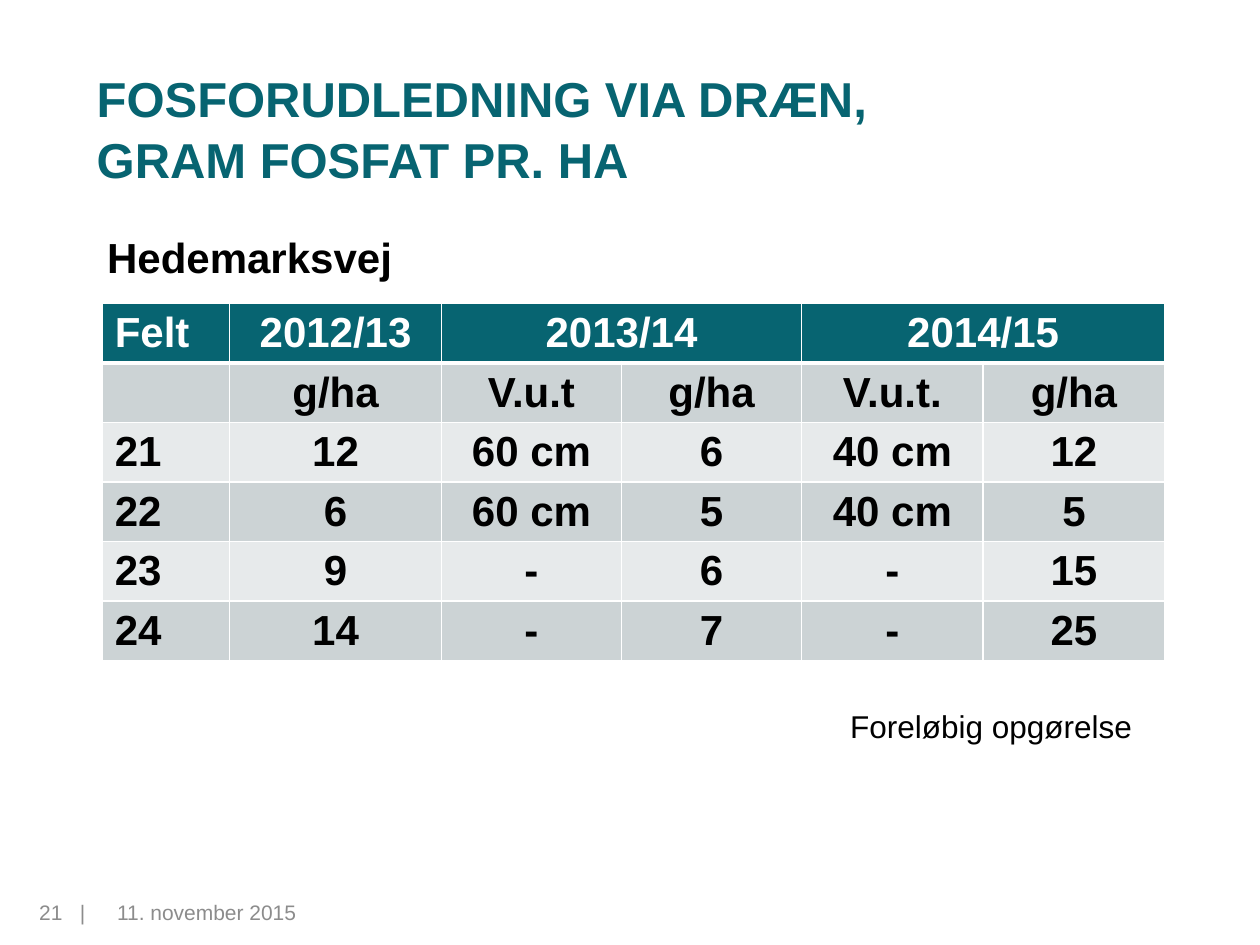
"""Build the slide on phosphorus discharge through drains."""
import copy

import pptx
import pptx.dml.color
import pptx.enum.text
import pptx.oxml
import pptx.oxml.ns
import pptx.util

Cm = pptx.util.Cm
Align = pptx.enum.text.PP_ALIGN
Anchor = pptx.enum.text.MSO_ANCHOR
TEAL = pptx.dml.color.RGBColor(0x07, 0x64, 0x71)
BLACK = pptx.dml.color.RGBColor(0, 0, 0)
WHITE = pptx.dml.color.RGBColor(255, 255, 255)
GREY = pptx.dml.color.RGBColor(0x8C, 0x8C, 0x8C)
BANDS = (pptx.dml.color.RGBColor(0xE7, 0xEA, 0xEB),
         pptx.dml.color.RGBColor(0xCC, 0xD3, 0xD5))

HEADING = "FOSFORUDLEDNING VIA DRÆN, \vGRAM FOSFAT PR. HA"
DISCHARGE = [
    ("Felt", "2012/13", "2013/14", "", "2014/15", ""),
    ("", "g/ha", "V.u.t", "g/ha", "V.u.t.", "g/ha"),
    ("21", "12", "60 cm", "6", "40 cm", "12"),
    ("22", "6", "60 cm", "5", "40 cm", "5"),
    ("23", "9", "-", "6", "-", "15"),
    ("24", "14", "-", "7", "-", "25"),
]
COLUMN_WIDTHS = (2.57, 4.27, 3.63, 3.63, 3.66, 3.66)
ROW_HEIGHT = 1.19
YEAR_SPANS = (2, 4)
LABELS = [
    ("Hedemarksvej", (1.91, 4.55, 6.32, 1.27),
     dict(size=24, color=BLACK, bold=True, wrap=False)),
    ("Foreløbig opgørelse", (16.89, 14.12, 6.25, 1.02),
     dict(size=18, color=BLACK, wrap=False)),
    ("11. november 2015", (2.11, 18.01, 5.92, 1.02),
     dict(size=12, color=GREY)),
    ("21\t|", (0, 18.01, 1.98, 1.02),
     dict(size=12, color=GREY, left=0.79, right=0, tab=0.82)),
]


def write(frame, text, size, color, bold=False, align=Align.LEFT, wrap=True,
          left=0.25, right=0.25, tab=None, spacing=None):
    frame.word_wrap = wrap
    frame.margin_left, frame.margin_right = Cm(left), Cm(right)
    paragraph = frame.paragraphs[0]
    paragraph.text = text
    paragraph.alignment = align
    if spacing:
        paragraph.line_spacing = spacing
    if tab:
        stops = pptx.oxml.parse_xml(
            f'<a:tabLst {pptx.oxml.ns.nsdecls("a")}>'
            f'<a:tab pos="{Cm(tab)}" algn="l"/></a:tabLst>')
        paragraph._p.get_or_add_pPr().append(stops)
    for run in paragraph.runs:
        run.font.name = "Arial"
        run.font.size = pptx.util.Pt(size)
        run.font.bold = bold
        run.font.color.rgb = color
    for line_break in paragraph._p.findall(pptx.oxml.ns.qn("a:br")):
        line_break.append(copy.deepcopy(paragraph.runs[0]._r.rPr))


def draw_borders(cell, top, bottom):
    properties = cell._tc.get_or_add_tcPr()
    for side, points in (("L", 1), ("R", 1), ("T", top), ("B", bottom)):
        properties.append(pptx.oxml.parse_xml(
            f'<a:ln{side} {pptx.oxml.ns.nsdecls("a")} w="{pptx.util.Pt(points)}">'
            f'<a:solidFill><a:srgbClr val="{WHITE}"/></a:solidFill></a:ln{side}>'))


def add_discharge_table(slide):
    discharge = slide.shapes.add_table(
        len(DISCHARGE), len(COLUMN_WIDTHS), Cm(2.06), Cm(6.12),
        Cm(sum(COLUMN_WIDTHS)), Cm(ROW_HEIGHT * len(DISCHARGE))).table
    for column, width in zip(discharge.columns, COLUMN_WIDTHS):
        column.width = Cm(width)
    for row, values in enumerate(DISCHARGE):
        discharge.rows[row].height = Cm(ROW_HEIGHT)
        for column, value in enumerate(values):
            cell = discharge.cell(row, column)
            draw_borders(cell, top=3 if row == 1 else 1, bottom=1 if row else 3)
            cell.fill.solid()
            cell.fill.fore_color.rgb = BANDS[row % 2] if row else TEAL
            write(cell.text_frame, value, size=24, bold=True,
                  color=BLACK if row else WHITE,
                  align=Align.CENTER if column else Align.LEFT)
    for start in YEAR_SPANS:
        discharge.cell(0, start).merge(discharge.cell(0, start + 1))


def main():
    deck = pptx.Presentation()
    deck.slide_width, deck.slide_height = Cm(25.4), Cm(19.05)
    slide = deck.slides.add_slide(deck.slide_layouts[5])
    heading = slide.shapes.title
    heading.left, heading.top = Cm(1.7), Cm(0.97)
    heading.width, heading.height = Cm(22.43), Cm(3.18)
    heading.text_frame.vertical_anchor = Anchor.MIDDLE
    write(heading.text_frame, HEADING, size=28, color=TEAL, bold=True,
          spacing=1.05)
    add_discharge_table(slide)
    for text, place, style in LABELS:
        label = slide.shapes.add_textbox(*map(Cm, place))
        write(label.text_frame, text, **style)
    deck.save("out.pptx")


if __name__ == "__main__":
    main()
